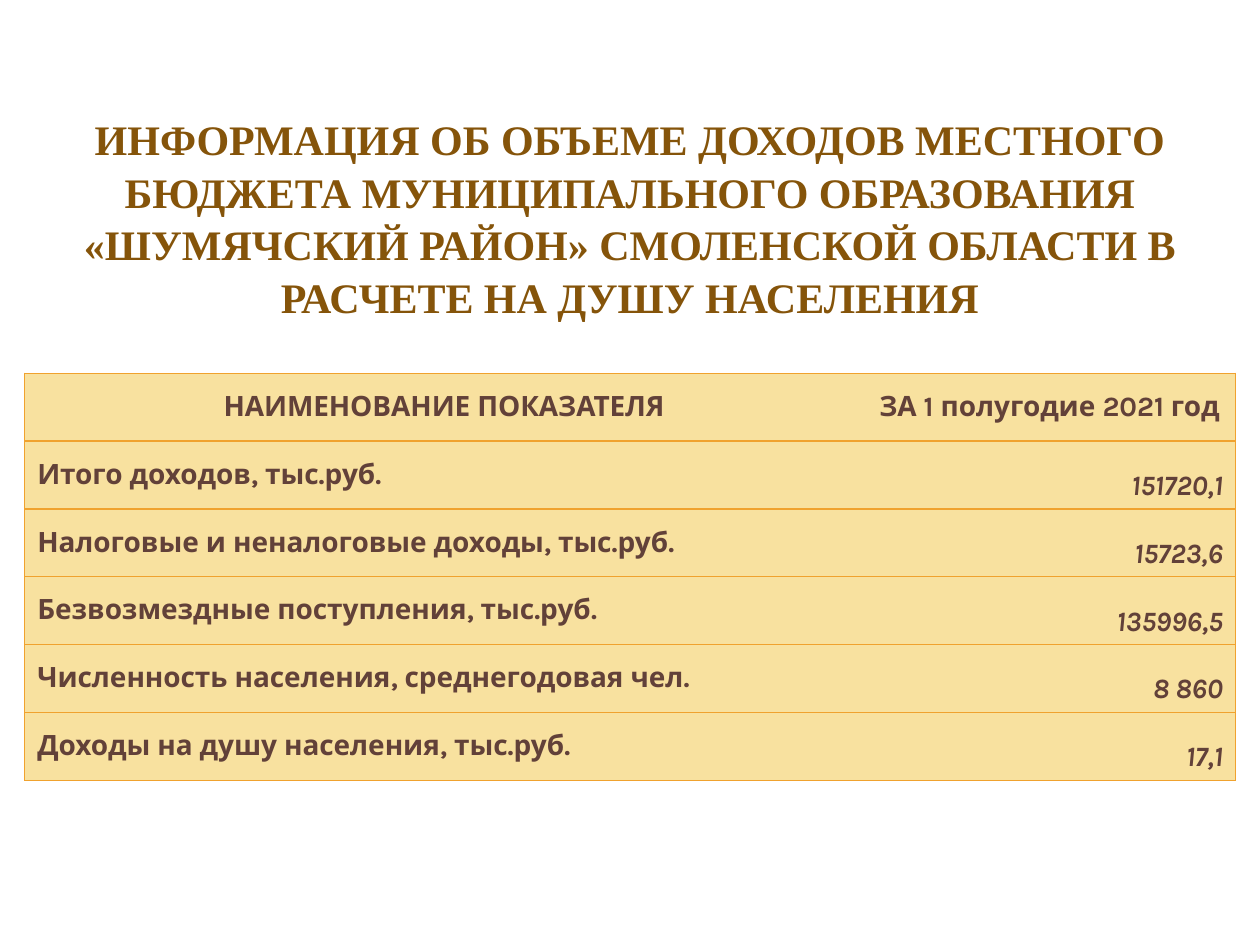
from lxml import etree
from pptx import Presentation
from pptx.dml.color import RGBColor
from pptx.enum.text import MSO_ANCHOR, MSO_AUTO_SIZE, PP_ALIGN
from pptx.oxml.ns import qn
from pptx.util import Pt

LEFT, CENTER, RIGHT = PP_ALIGN.LEFT, PP_ALIGN.CENTER, PP_ALIGN.RIGHT
MIDDLE, BOTTOM = MSO_ANCHOR.MIDDLE, MSO_ANCHOR.BOTTOM

THEME = {
    "title": {"font": "Times New Roman", "size": 24, "color": "85540A"},
    "cell": {"font": "Karla", "size": 16, "color": "624139"},
    "fill": "F8E19F",
    "line": "F0A22E",
    "width": 0.79,
}


def add_run(para, text, style, italic=False):
    run = para.add_run()
    run.text = text
    font = run.font
    font.name = style["font"]
    font.size = Pt(style["size"])
    font.color.rgb = RGBColor.from_string(style["color"])
    font.bold = True
    font.italic = italic


def set_edge(cell, side, shown):
    """Draw or hide one cell border; call before the cell is filled."""
    props = cell._tc.get_or_add_tcPr()
    edge = etree.SubElement(props, qn(f"a:ln{side}"), w=str(Pt(THEME["width"])))
    if shown:
        solid = etree.SubElement(edge, qn("a:solidFill"))
        etree.SubElement(solid, qn("a:srgbClr"), val=THEME["line"])
    else:
        etree.SubElement(edge, qn("a:noFill"))


deck = Presentation()
deck.slide_width, deck.slide_height = Pt(720), Pt(540)
slide = deck.slides.add_slide(deck.slide_layouts[5])

title = slide.shapes.title
title.left, title.top, title.width, title.height = Pt(0), Pt(65.5), Pt(720), Pt(116.6)
frame = title.text_frame
frame.word_wrap = True
frame.auto_size = MSO_AUTO_SIZE.NONE
frame.vertical_anchor = MIDDLE
para = frame.paragraphs[0]
para.alignment = CENTER
para.line_spacing = 1.04
add_run(
    para,
    "ИНФОРМАЦИЯ ОБ ОБЪЕМЕ ДОХОДОВ МЕСТНОГО БЮДЖЕТА МУНИЦИПАЛЬНОГО "
    "ОБРАЗОВАНИЯ «ШУМЯЧСКИЙ РАЙОН» СМОЛЕНСКОЙ ОБЛАСТИ В РАСЧЕТЕ НА ДУШУ НАСЕЛЕНИЯ",
    THEME["title"],
)

rows = [
    ("НАИМЕНОВАНИЕ ПОКАЗАТЕЛЯ", "ЗА 1 полугодие 2021 год"),
    ("Итого доходов, тыс.руб.", "151720,1"),
    ("Налоговые и неналоговые доходы, тыс.руб.", "15723,6"),
    ("Безвозмездные поступления, тыс.руб.", "135996,5"),
    ("Численность населения, среднегодовая чел.", "8 860"),
    ("Доходы на душу населения, тыс.руб.", "17,1"),
]
widths = [479.5, 212.4]
height = 38.75

table = slide.shapes.add_table(
    len(rows), len(widths), Pt(14.1), Pt(213.3), Pt(sum(widths)), Pt(height * len(rows))
).table
for col, width in zip(table.columns, widths):
    col.width = Pt(width)

for r, row in enumerate(rows):
    table.rows[r].height = Pt(height)
    for c, text in enumerate(row):
        cell = table.cell(r, c)
        value = r > 0 and c == 1
        for side, shown in (("L", c == 0), ("R", c == 1), ("T", True), ("B", True)):
            set_edge(cell, side, shown)
        cell.fill.solid()
        cell.fill.fore_color.rgb = RGBColor.from_string(THEME["fill"])
        cell.vertical_anchor = BOTTOM if value else MIDDLE
        para = cell.text_frame.paragraphs[0]
        para.alignment = CENTER if r == 0 else RIGHT if value else LEFT
        add_run(para, text, THEME["cell"], italic=value)

deck.save("out.pptx")
